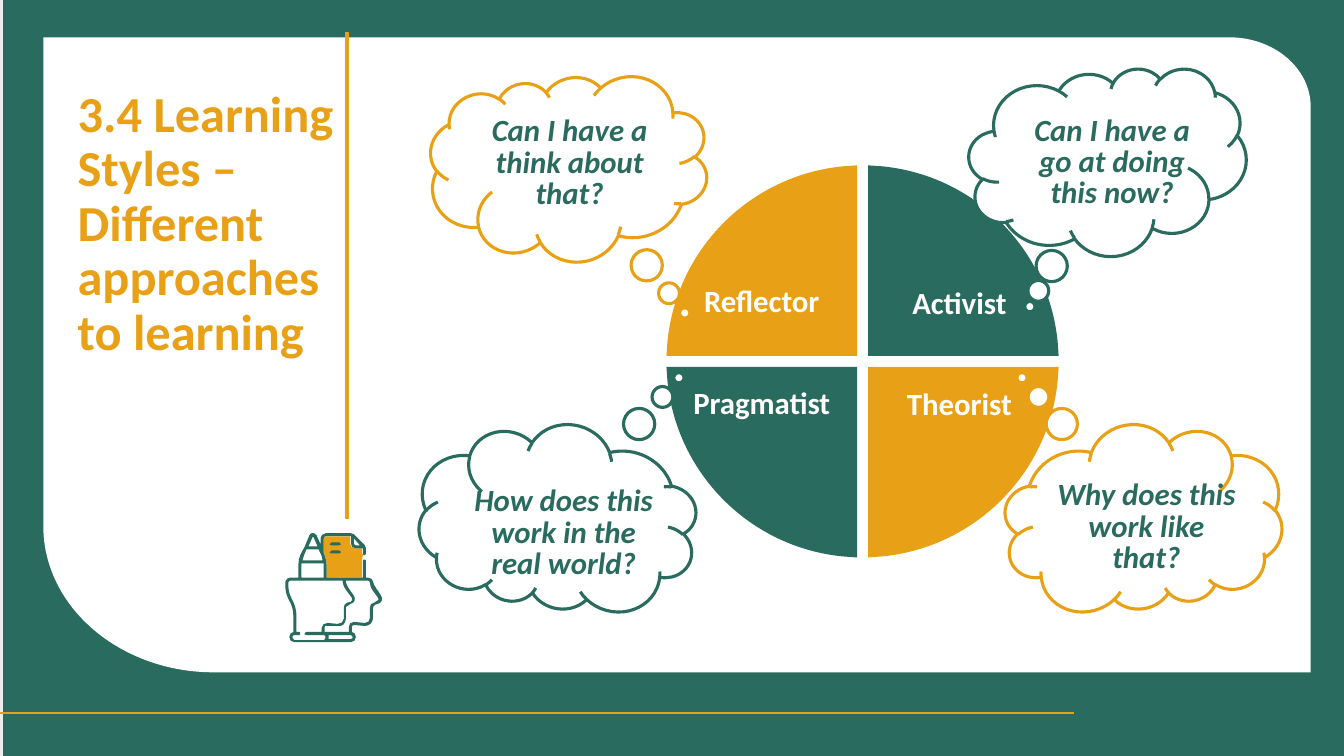
from pptx import Presentation
from pptx.dml.color import RGBColor
from pptx.enum import shapes as es, text as et
from pptx.oxml.ns import qn
from pptx.util import Inches, Pt
from lxml import etree

GREEN = RGBColor(0x29, 0x6B, 0x5F)
AMBER = RGBColor(0xE8, 0xA1, 0x16)
WHITE = RGBColor(0xFF, 0xFF, 0xFF)
GREY = RGBColor(0xEC, 0xEC, 0xEC)

prs = Presentation()
prs.slide_width, prs.slide_height = Inches(13.33), Inches(7.5)
slide = prs.slides.add_slide(prs.slide_layouts[5])
shapes = slide.shapes


def draw_outline(contours, colour):
    """Fill closed contours; a pair is a corner, six numbers are a Bezier curve."""
    builder = shapes.build_freeform(*map(Inches, contours[0][0]), scale=1.0)
    for number, contour in enumerate(contours):
        if number:
            builder.move_to(*map(Inches, contour[0]))
        builder.add_line_segments([(Inches(step[i]), Inches(step[i + 1]))
                                   for step in contour[1:] for i in range(0, len(step), 2)])
    outline = builder.convert_to_shape()
    # Join the three points of each curve into one Bezier segment
    corners = iter(list(outline._element.iter(qn("a:lnTo"))))
    for contour in contours:
        for step in contour[1:]:
            segment = next(corners)
            if len(step) == 6:
                curve = etree.Element(qn("a:cubicBezTo"))
                segment.addprevious(curve)
                for corner in (segment, next(corners), next(corners)):
                    curve.append(corner[0])
                    corner.getparent().remove(corner)
                segment = curve
        segment.addnext(etree.Element(qn("a:close")))
    outline.shadow.inherit = False
    outline.fill.solid()
    outline.fill.fore_color.rgb = colour
    outline.line.fill.background()
    return outline


def write(box, words, size, colour, align, spacing, italic=False):
    frame = box.text_frame
    frame.text = words
    frame.word_wrap = True
    frame.auto_size = et.MSO_AUTO_SIZE.NONE
    frame.vertical_anchor = et.MSO_ANCHOR.TOP
    paragraph = frame.paragraphs[0]
    paragraph.alignment = align
    paragraph.line_spacing = spacing
    font = paragraph.runs[0].font
    font.name, font.size, font.bold, font.italic = "Calibri", Pt(size), True, italic
    font.color.rgb = colour


# Frame: green page, white panel with shaped corners, grey bleed at the left edge
page = shapes.add_shape(es.MSO_SHAPE.RECTANGLE, 0, 0, Inches(13.33), Inches(7.5))
draw_outline([[(0.43, 0.37), (12.19, 0.37), (12.64, 0.37, 13, 0.68, 13, 1.06), (13, 6.67),
               (2.12, 6.67), (1.19, 6.67, 0.43, 6.02, 0.43, 5.22)]], WHITE)
edge = shapes.add_shape(es.MSO_SHAPE.RECTANGLE, *map(Inches, (-3.1, -0.38, 3.13, 8.27)))
for band, colour in [(page, GREEN), (edge, GREY)]:
    band.shadow.inherit = False
    band.fill.solid()
    band.fill.fore_color.rgb = colour
    band.line.fill.background()

# Amber rules: footer and title divider
for x1, y1, x2, y2, weight in [(0, 7.07, 10.65, 7.07, 1.5), (3.44, 0.32, 3.44, 5.15, 2.75)]:
    rule = shapes.add_connector(es.MSO_CONNECTOR.STRAIGHT, *map(Inches, (x1, y1, x2, y2)))
    rule.line.color.rgb = AMBER
    rule.line.width = Pt(weight)
    etree.SubElement(rule._element.spPr, qn("a:effectLst"))

# Title, brought in front of the frame
title = shapes.title
title.left, title.top, title.width, title.height = map(Inches, (0.67, 0.83, 2.88, 0.88))
write(title, "3.4 Learning Styles – Different approaches to learning", 36, AMBER,
      et.PP_ALIGN.LEFT, 0.9)
shapes._spTree.append(title._element)

# Icon: two heads holding a pencil and a sheet of notes
sheet = draw_outline([[
    (3.59, 5.56), (3.59, 5.73), (3.56, 5.73, 3.28, 5.73, 3.24, 5.73), (3.24, 5.6),
    (3.24, 5.53, 3.21, 5.49, 3.21, 5.47), (3.21, 5.34), (3.21, 5.33, 3.22, 5.32, 3.23, 5.32),
    (3.47, 5.32), (3.47, 5.39), (3.47, 5.42, 3.5, 5.44, 3.53, 5.44), (3.59, 5.44), (3.59, 5.49),
    (3.59, 5.49, 3.59, 5.49, 3.6, 5.5)]], AMBER)
notes = [draw_outline([[
    (3.36, y), (3.29, y), (3.28, y, 3.27, y + 0.01, 3.27, y + 0.02),
    (3.27, y + 0.03, 3.28, y + 0.03, 3.29, y + 0.03), (3.36, y + 0.03),
    (3.37, y + 0.03, 3.38, y + 0.03, 3.38, y + 0.02),
    (3.38, y + 0.01, 3.37, y, 3.36, y)]], GREEN) for y in (5.38, 5.46)]
silhouette = [
    (3.78, 5.91), (3.74, 5.84, 3.71, 5.82, 3.7, 5.77), (3.7, 5.75, 3.68, 5.73, 3.65, 5.73),
    (3.63, 5.73), (3.63, 5.56), (3.63, 5.56, 3.62, 5.55, 3.61, 5.55),
    (3.61, 5.55, 3.6, 5.56, 3.6, 5.56), (3.6, 5.73), (3.56, 5.73, 3.28, 5.73, 3.24, 5.73),
    (3.24, 5.61), (3.24, 5.54, 3.21, 5.49, 3.21, 5.48), (3.21, 5.35),
    (3.21, 5.33, 3.22, 5.32, 3.23, 5.32), (3.48, 5.32), (3.48, 5.39),
    (3.48, 5.42, 3.5, 5.44, 3.53, 5.44), (3.6, 5.44), (3.6, 5.49),
    (3.6, 5.5, 3.61, 5.51, 3.61, 5.51), (3.62, 5.51, 3.63, 5.5, 3.63, 5.49), (3.63, 5.44),
    (3.63, 5.43, 3.62, 5.42, 3.62, 5.41), (3.51, 5.3), (3.5, 5.3, 3.49, 5.29, 3.48, 5.29),
    (3.23, 5.29), (3.2, 5.29, 3.18, 5.32, 3.18, 5.34), (3.18, 5.4), (3.14, 5.31),
    (3.12, 5.28, 3.08, 5.28, 3.07, 5.31), (3.02, 5.43), (2.99, 5.48, 2.96, 5.53, 2.96, 5.6),
    (2.96, 5.73), (2.88, 5.73), (2.86, 5.73, 2.84, 5.74, 2.83, 5.77),
    (2.83, 5.78, 2.83, 5.79, 2.83, 5.81), (2.83, 5.95, 2.91, 5.97, 2.91, 6.11), (2.91, 6.27),
    (2.89, 6.27, 2.87, 6.29, 2.87, 6.32), (2.87, 6.35, 2.89, 6.37, 2.92, 6.37), (3.48, 6.37),
    (3.51, 6.37, 3.53, 6.35, 3.53, 6.32), (3.53, 6.29, 3.51, 6.27, 3.49, 6.27), (3.49, 6.22),
    (3.49, 6.21, 3.5, 6.2, 3.51, 6.2), (3.62, 6.21), (3.66, 6.21, 3.7, 6.18, 3.7, 6.13),
    (3.7, 6.03), (3.7, 6.02, 3.71, 6.01, 3.72, 6), (3.75, 5.99),
    (3.79, 5.98, 3.8, 5.94, 3.78, 5.91)]
page_fold = [(3.57, 5.41), (3.53, 5.41), (3.52, 5.41, 3.51, 5.4, 3.51, 5.39), (3.51, 5.34)]
pencil_tip = [(3.1, 5.33), (3.1, 5.32, 3.11, 5.32, 3.11, 5.33), (3.15, 5.42), (3.06, 5.42)]
pencil_cone = [(3.04, 5.45), (3.16, 5.45), (3.19, 5.51, 3.2, 5.53, 3.2, 5.56), (3, 5.56),
               (3.01, 5.52, 3.02, 5.5, 3.04, 5.45)]
pencil_body = [(2.99, 5.61), (2.99, 5.59), (3.21, 5.59), (3.21, 5.73), (2.99, 5.73)]
front_head = [
    (2.9, 6.32), (2.9, 6.31, 2.91, 6.3, 2.92, 6.3), (2.97, 6.3),
    (2.97, 6.3, 2.98, 6.29, 2.98, 6.28), (2.98, 6.28, 2.97, 6.27, 2.97, 6.27), (2.94, 6.27),
    (2.94, 6.11), (2.94, 5.96, 2.86, 5.94, 2.86, 5.81), (2.86, 5.78),
    (2.86, 5.77, 2.87, 5.76, 2.88, 5.76), (3.4, 5.76), (3.4, 5.78),
    (3.41, 5.84, 3.45, 5.87, 3.49, 5.93), (3.5, 5.95, 3.49, 5.96, 3.48, 5.97), (3.44, 5.98),
    (3.42, 5.99, 3.41, 6.01, 3.41, 6.03), (3.41, 6.14), (3.41, 6.17, 3.38, 6.19, 3.35, 6.19),
    (3.25, 6.18), (3.22, 6.18, 3.19, 6.2, 3.19, 6.23), (3.19, 6.27), (3.04, 6.27),
    (3.03, 6.27, 3.02, 6.28, 3.02, 6.29), (3.02, 6.29, 3.03, 6.3, 3.04, 6.3), (3.21, 6.3),
    (3.22, 6.3, 3.23, 6.31, 3.23, 6.32), (3.23, 6.34, 3.22, 6.35, 3.21, 6.35), (2.92, 6.35),
    (2.91, 6.34, 2.9, 6.33, 2.9, 6.32)]
base = [(3.5, 6.32), (3.5, 6.33, 3.49, 6.34, 3.48, 6.34), (3.26, 6.34), (3.26, 6.3),
        (3.48, 6.3), (3.49, 6.3, 3.5, 6.31, 3.5, 6.32)]
back_head = [
    (3.74, 5.96), (3.71, 5.98), (3.68, 5.98, 3.67, 6, 3.67, 6.03), (3.67, 6.13),
    (3.67, 6.16, 3.65, 6.18, 3.62, 6.18), (3.51, 6.17), (3.48, 6.17, 3.46, 6.19, 3.46, 6.22),
    (3.46, 6.27), (3.22, 6.27), (3.22, 6.22), (3.22, 6.21, 3.23, 6.2, 3.24, 6.21), (3.35, 6.21),
    (3.4, 6.22, 3.43, 6.18, 3.43, 6.14), (3.43, 6.03), (3.43, 6.02, 3.44, 6.01, 3.45, 6.01),
    (3.48, 5.99), (3.52, 5.98, 3.53, 5.94, 3.51, 5.91), (3.47, 5.85, 3.44, 5.82, 3.43, 5.77),
    (3.43, 5.76), (3.65, 5.76), (3.66, 5.76, 3.67, 5.77, 3.67, 5.78),
    (3.67, 5.84, 3.71, 5.87, 3.75, 5.93), (3.76, 5.94, 3.76, 5.96, 3.74, 5.96)]
heads = draw_outline([silhouette, page_fold, pencil_tip, pencil_cone, pencil_body, front_head,
                      base, back_head], GREEN)
shapes.add_group_shape([sheet, *notes, heads])

# Wheel: one quarter, measured from its inner corner and mirrored
QUARTER = [(0, 1.89), (0.14, 1.88), (1.06, 1.79, 1.79, 1.06, 1.88, 0.14), (1.89, 0), (0, 0)]
INNER_X, INNER_Y = {-1: 8.5, 1: 8.61}, {-1: 3.53, 1: 3.64}
wheel = [("Activist", GREEN, 1, -1, 8.57, 2.81), ("Reflector", AMBER, -1, -1, 6.61, 2.79),
         ("Pragmatist", GREEN, -1, 1, 6.61, 3.8), ("Theorist", AMBER, 1, 1, 8.57, 3.81)]
for style, colour, side, rise, left, top in wheel:
    draw_outline([[tuple(INNER_Y[rise] + rise * v if i % 2 else INNER_X[side] + side * v
                         for i, v in enumerate(step)) for step in QUARTER]], colour)
for style, colour, side, rise, left, top in wheel:
    label = shapes.add_textbox(*map(Inches, (left, top, 1.89, 0.6)))
    write(label, style, 22, WHITE, et.PP_ALIGN.CENTER, 0.9)

# Thought clouds with their questions
for question, colour, left, top, turn, mirrored, tail, text_left, text_top in [
        ("Can I have a go at doing this now?", GREEN, 9.61, 0.68, 0, False,
         (-0.28, 0.77), 10.03, 1.1),
        ("How does this work in the real world?", GREEN, 4.16, 4.21, 195, False,
         (-0.29, 0.89), 4.59, 4.78),
        ("Can I have a think about that?", AMBER, 4.27, 0.74, 347.1, True,
         (-0.29, 0.89), 4.65, 1.11),
        ("Why does this work like that?", AMBER, 9.96, 4.21, 165, True,
         (-0.29, 0.89), 10.37, 4.72)]:
    cloud = shapes.add_shape(es.MSO_SHAPE.CLOUD_CALLOUT, *map(Inches, (left, top, 2.75, 1.86)))
    cloud.shadow.inherit = False
    cloud.adjustments[0], cloud.adjustments[1] = tail
    cloud.rotation = turn
    if mirrored:
        cloud._element.spPr.find(qn("a:xfrm")).set("flipH", "1")
    cloud.fill.solid()
    cloud.fill.fore_color.rgb = WHITE
    cloud.line.color.rgb = colour
    cloud.line.width = Pt(2.25)
    thought = shapes.add_textbox(*map(Inches, (text_left, text_top, 2, 0.93)))
    write(thought, question, 22, GREEN, et.PP_ALIGN.CENTER, Pt(22.4), italic=True)

prs.save("out.pptx")
